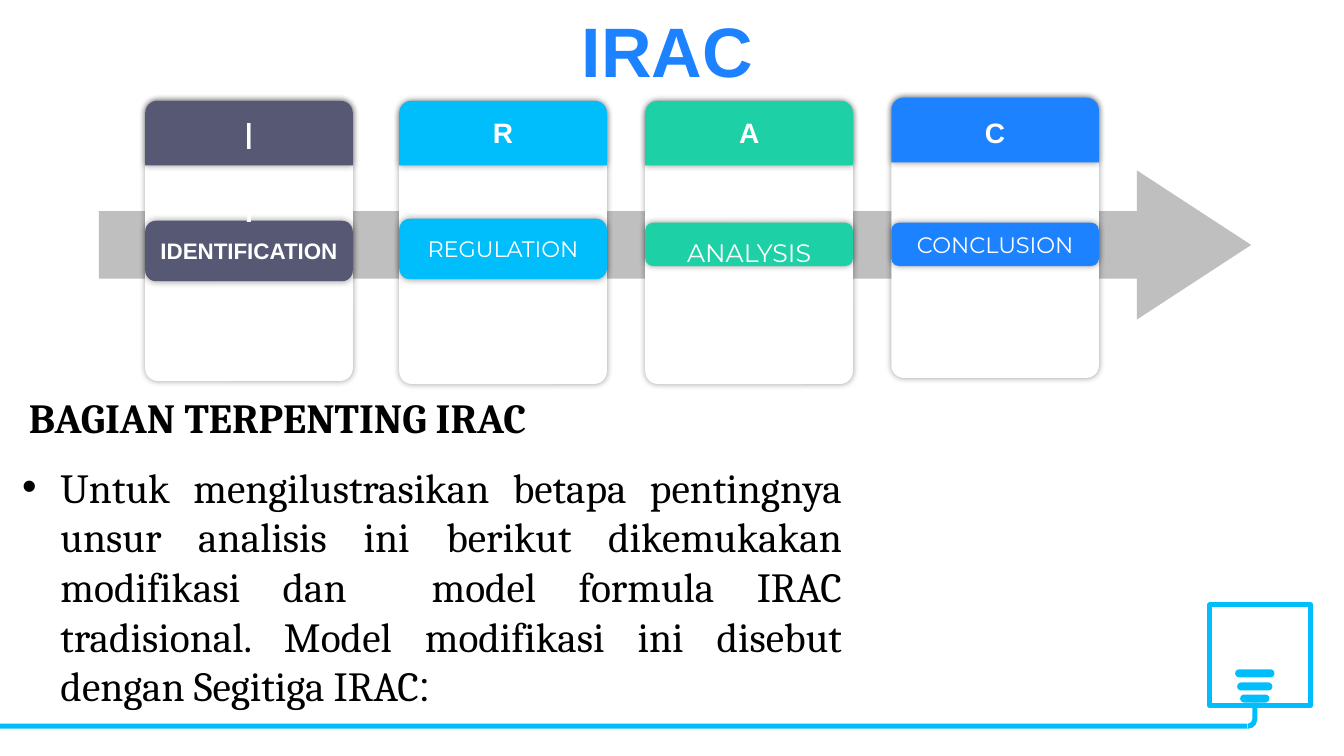
from math import cos, radians, sin

from lxml.etree import SubElement
from pptx import Presentation
from pptx.dml.color import RGBColor
from pptx.enum.shapes import MSO_SHAPE as Shape
from pptx.enum.text import MSO_ANCHOR as Anchor, MSO_AUTO_SIZE as AutoSize, PP_ALIGN as Align
from pptx.oxml import parse_xml
from pptx.oxml.ns import nsdecls, qn
from pptx.util import Inches, Pt

COLORS = {
    "white": "FFFFFF", "black": "000000", "gray": "BFBFBF", "slate": "565874",
    "cyan": "00BDFB", "green": "1ED0A6", "blue": "1C82FF",
}

presentation = Presentation()
presentation.slide_width = Inches(13.33)
presentation.slide_height = Inches(7.5)
slide = presentation.slides.add_slide(presentation.slide_layouts[1])
shapes = slide.shapes


def add_filled(kind, box, color, adjustments=(), shadow=False):
    """Add a preset shape without a line; a shadow is a soft even glow around it."""
    shape = shapes.add_shape(kind, *[Inches(length) for length in box])
    for index, value in enumerate(adjustments):
        shape.adjustments[index] = value
    shape.fill.solid()
    shape.fill.fore_color.rgb = RGBColor.from_string(COLORS[color])
    shape.line.fill.background()
    shape.shadow.inherit = False
    if shadow:
        effects = shape._element.spPr.find(qn("a:effectLst"))
        glow = SubElement(effects, qn("a:outerShdw"), blurRad=str(Pt(5)), dist="0", dir="0",
                          algn="ctr", rotWithShape="0")
        black = SubElement(glow, qn("a:srgbClr"), val=COLORS["black"])
        SubElement(black, qn("a:alpha"), val="40000")
    return shape


def write(shape, text, size, font, color, bold=False, align=Align.CENTER, anchor=Anchor.MIDDLE):
    """Set one formatted paragraph in the shape and return it."""
    frame = shape.text_frame
    frame.text = text
    frame.word_wrap = True
    frame.vertical_anchor = anchor
    paragraph = frame.paragraphs[0]
    paragraph.alignment = align
    paragraph.space_before = Pt(0)
    run_font = paragraph.runs[0].font
    run_font.size = Pt(size)
    run_font.name = font
    run_font.bold = bold
    run_font.color.rgb = RGBColor.from_string(COLORS[color])
    return paragraph


# Light bulb: dome and neck built from circular arcs
bulb_points = []
for center_x, center_y, radius, start, end in [
    (12.445, 5.945, 0.445, 135, 405),
    (12.565, 6.485, 0.085, 0, 90),
    (12.325, 6.485, 0.085, 90, 180),
]:
    if radius < 0.1 and start == 0:
        bulb_points.append((12.65, 6.37))
    for angle in range(start, end + 1, 9):
        bulb_points.append((center_x + radius * cos(radians(angle)),
                            center_y + radius * sin(radians(angle))))
bulb_points.append((12.24, 6.37))

# Filament: a bar with three prongs and two legs
prong_lefts = [12.34, 12.42, 12.51]
filament_points = [(12.29, 6.01)]
for x in prong_lefts:
    filament_points += [(x, 6.01), (x, 5.97), (x + 0.01, 5.95),
                        (x + 0.04, 5.95), (x + 0.05, 5.97), (x + 0.05, 6.01)]
filament_points += [(12.61, 6.01), (12.63, 6.04), (12.58, 6.55),
                    (12.55, 6.58), (12.53, 6.55), (12.58, 6.05)]
for x in reversed(prong_lefts):
    filament_points += [(x + 0.05, 6.05), (x + 0.05, 6.09), (x + 0.04, 6.11),
                        (x + 0.01, 6.11), (x, 6.09), (x, 6.05)]
filament_points += [(12.32, 6.05), (12.36, 6.55), (12.34, 6.58), (12.31, 6.55), (12.27, 6.04)]

for points, fill, line_width in [(bulb_points, "white", 3.5), (filament_points, "cyan", 0)]:
    builder = shapes.build_freeform(*points[0], scale=Inches(1))
    builder.add_line_segments(points[1:], close=True)
    outline = builder.convert_to_shape()
    outline.shadow.inherit = False
    outline.fill.solid()
    outline.fill.fore_color.rgb = RGBColor.from_string(COLORS[fill])
    if line_width:
        outline.line.color.rgb = RGBColor.from_string(COLORS["cyan"])
        outline.line.width = Pt(line_width)
    else:
        outline.line.fill.background()

# Bulb base and the cable along the bottom
for left, top, width in [(12.25, 6.64, 0.39), (12.27, 6.77, 0.35), (12.3, 6.89, 0.29)]:
    add_filled(Shape.ROUNDED_RECTANGLE, (left, top, width, 0.08), "cyan", [0.5])
add_filled(Shape.RECTANGLE, (0, 7.18, 12.37, 0.05), "cyan")
add_filled(Shape.RECTANGLE, (12.42, 6.97, 0.05, 0.17), "cyan")
add_filled(Shape.BLOCK_ARC, (12.28, 7.04, 0.19, 0.19), "cyan", [0, 54, 0.27])

# Title
title = shapes.title
title.left, title.top, title.width, title.height = map(Inches, (3.5, 0.17, 6.24, 0.79))
title_paragraph = write(title, "IRAC", 50, "Arial", "blue", bold=True)
title_paragraph.line_spacing = 0.8
title.text_frame.auto_size = AutoSize.NONE
title_paragraph.runs[0].font._element.insert(0, parse_xml(
    f'<a:ln {nsdecls("a")} w="{Pt(1.5)}"><a:solidFill><a:srgbClr val="FEFEFE"/></a:solidFill></a:ln>'))

# Arrow with the four cards
add_filled(Shape.RIGHT_ARROW, (0.98, 1.69, 11.43, 1.48), "gray", [0.453, 0.766])

CARD_WIDTH = 2.06
# letter, label, color, left, header top, card top, badge top, badge height, letter top
cards = [
    ("I", "IDENTIFICATION", "slate", 1.44, 1, 1, 2.19, 0.6, 1.88),
    ("R", "REGULATION", "cyan", 3.96, 1, 1.03, 2.17, 0.6, 1.1),
    ("A", "ANALYSIS", "green", 6.4, 1, 1.03, 2.21, 0.43, 1.1),
    ("C", "CONCLUSION", "blue", 8.84, 0.97, 0.97, 2.21, 0.43, 1.1),
]
for letter, label, color, left, header_top, card_top, badge_top, badge_height, letter_top in cards:
    add_filled(Shape.ROUNDED_RECTANGLE, (left, card_top, CARD_WIDTH, 2.78), "white", [0.061], True)
    header = add_filled(Shape.ROUND_2_SAME_RECTANGLE, (left, header_top, CARD_WIDTH, 0.64),
                        color, [0.19, 0], True)
    badge = add_filled(Shape.ROUNDED_RECTANGLE, (left, badge_top, CARD_WIDTH, badge_height),
                       color, [0.178], True)
    first = letter == "I"
    if first:
        write(header, letter, 27, "Arial", "white")
    label_paragraph = write(badge, label, 18 if label == "ANALYSIS" else 16,
                            "Arial" if first else "Montserrat", "white", bold=first)
    if label == "ANALYSIS":
        label_paragraph.line_spacing = 1.5
    letter_box = shapes.add_textbox(Inches(left + 0.54), Inches(letter_top), Inches(0.98), Inches(0.44))
    write(letter_box, letter, 20, "Arial", "white", bold=True, anchor=Anchor.TOP)

# Heading and body text
heading = shapes.add_textbox(Inches(-0.05), Inches(3.74), Inches(5.61), Inches(0.79))
write(heading, "BAGIAN TERPENTING IRAC", 29.6, "Cambria", "black", bold=True)

body = slide.placeholders[1]
body.left, body.top, body.width, body.height = map(Inches, (0.12, 4.53, 8.34, 2.72))
body_paragraph = write(
    body,
    "Untuk mengilustrasikan betapa pentingnya unsur analisis ini berikut dikemukakan "
    "modifikasi dan  model formula IRAC tradisional. Model modifikasi ini disebut "
    "dengan Segitiga IRAC",
    29.6, "Cambria", "black", align=Align.JUSTIFY, anchor=Anchor.TOP)
body.text_frame.auto_size = AutoSize.NONE
properties = body_paragraph._p.get_or_add_pPr()
properties.set("marL", str(Inches(0.38)))
properties.set("indent", str(Inches(-0.38)))
SubElement(properties, qn("a:buFont"), typeface="Arial")
SubElement(properties, qn("a:buChar"), char="•")
colon = body_paragraph.add_run()
colon.text = ":"
colon.font.size = Pt(29.6)
colon.font.name = "Roboto"
colon.font.color.rgb = RGBColor.from_string(COLORS["black"])

presentation.save("out.pptx")
